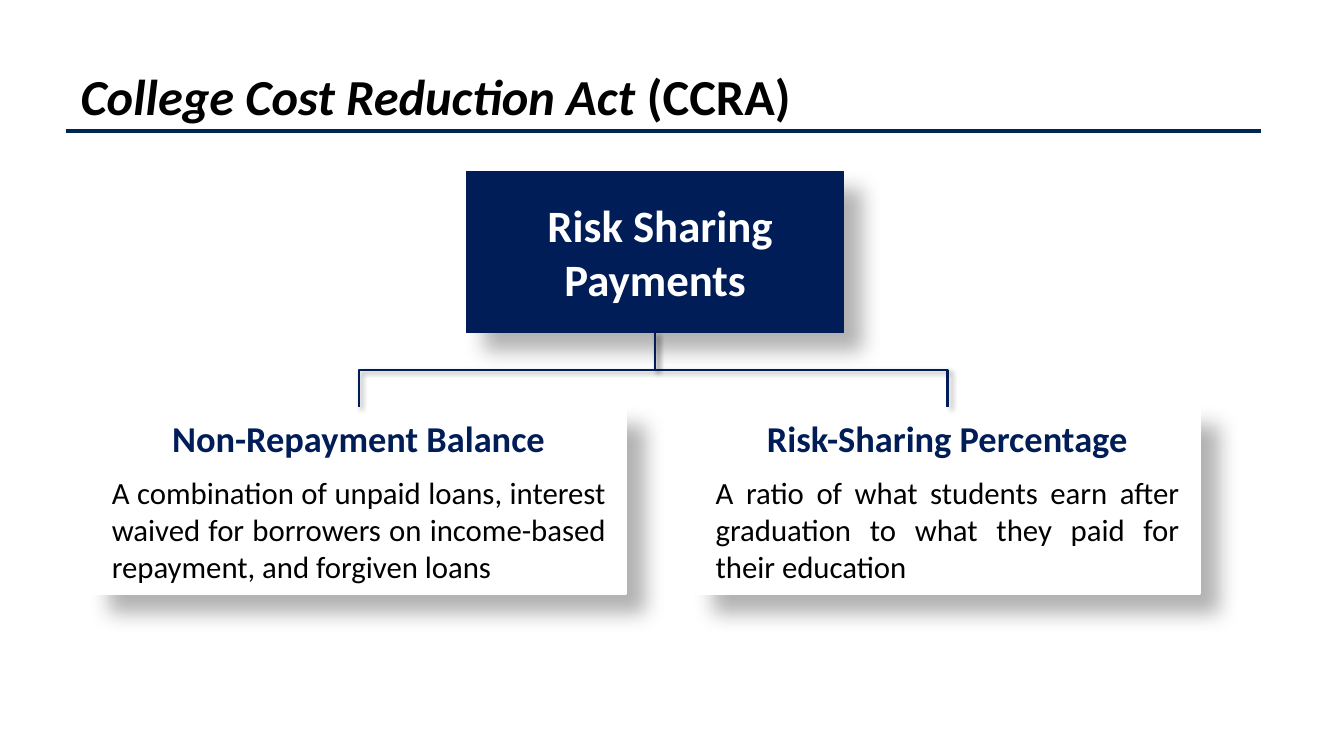
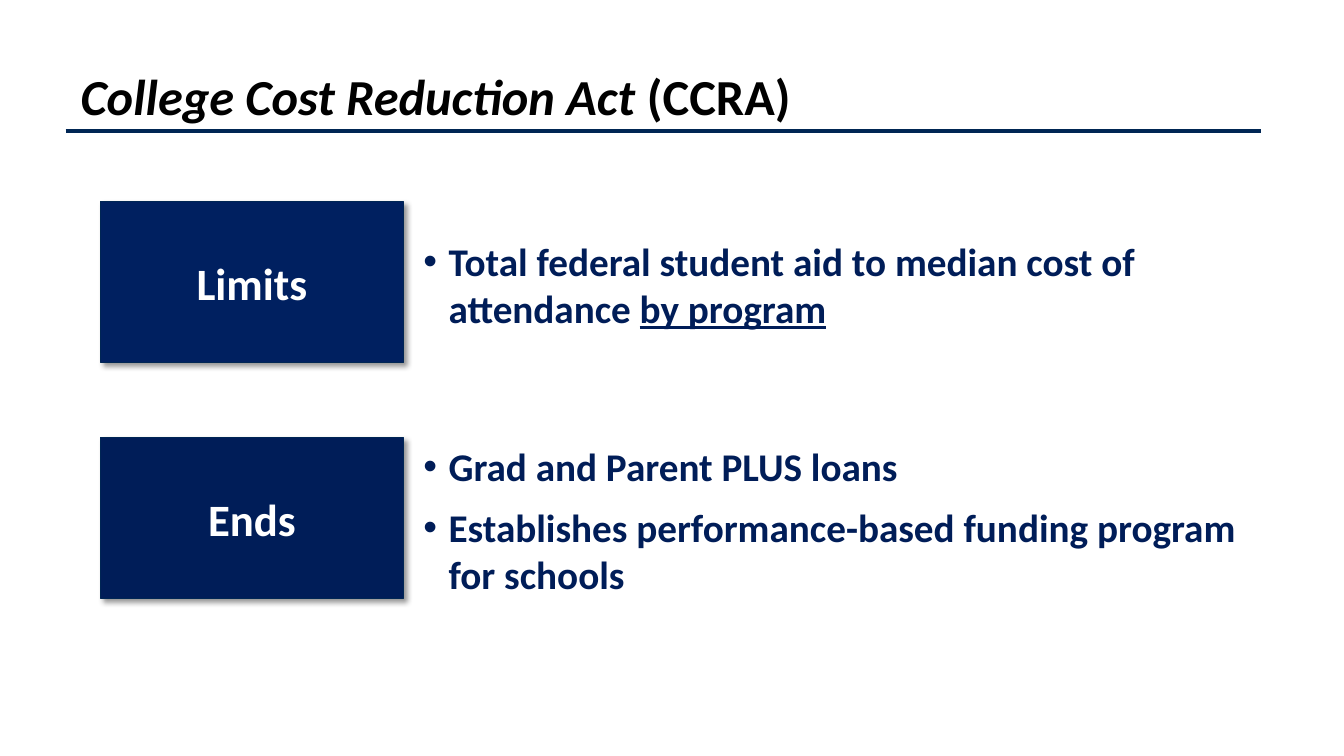
import pptx
import pptx.util
import pptx.dml.color
import pptx.enum.shapes
import pptx.enum.text
import pptx.oxml.ns
from lxml import etree

NAVY, BLUE, RULE, WHITE, BLACK = "001D58", "002060", "002654", "FFFFFF", "000000"
COLUMNS, ROWS, PER_INCH = 133.33, 75, 10
DEEP = {"alpha": 30, "blur": 15, "distance": 18}
SOFT = {"alpha": 40, "blur": 4, "distance": 3}
ALIGN = pptx.enum.text.PP_ALIGN
CONNECTOR = pptx.enum.shapes.MSO_CONNECTOR
qn = pptx.oxml.ns.qn


def grid(count):
    """Turn a number of columns or rows into a length."""
    return pptx.util.Inches(count / PER_INCH)


def color(hex_string):
    """Turn a hex string into a colour."""
    return pptx.dml.color.RGBColor.from_string(hex_string)


class Deck:
    """Holds the shared style and the current slide."""

    font_name = "Calibri"

    def __init__(self):
        """Start an empty wide presentation."""
        self.presentation = pptx.Presentation()
        self.presentation.slide_width = grid(COLUMNS)
        self.presentation.slide_height = grid(ROWS)
        self.slide = None

    def start(self, layout, title_runs, title_width):
        """Open a slide with its title and the rule below it."""
        self.slide = self.presentation.slides.add_slide(self.presentation.slide_layouts[layout])
        title = self.slide.shapes.title
        self.place(title, 7, 6, title_width, 7)
        self.frame(title)
        self.fill_paragraph(title.text_frame.paragraphs[0], title_runs, 36, BLACK)
        rule = self.slide.shapes.add_connector(
            CONNECTOR.STRAIGHT, grid(6.5), grid(13), grid(125.1), grid(13))
        self.outline(rule, RULE, 3)
        self.effects(rule)

    def place(self, item, left, top, width, height):
        """Move and size an item on the grid."""
        item.left, item.top = grid(left), grid(top)
        item.width, item.height = grid(width), grid(height)

    def frame(self, item, side=1, edge=0.5):
        """Set wrapping, anchor and insets of an item's text."""
        text = item.text_frame
        text.word_wrap = True
        text.auto_size = pptx.enum.text.MSO_AUTO_SIZE.NONE
        text.vertical_anchor = pptx.enum.text.MSO_ANCHOR.MIDDLE
        text.margin_left = text.margin_right = grid(side)
        text.margin_top = text.margin_bottom = grid(edge)

    def fill_paragraph(self, paragraph, runs, size, ink, align=ALIGN.LEFT, bold=True, before=0):
        """Fill a paragraph with (text, italic, underline) runs in one font."""
        for words, italic, underline in runs:
            run = paragraph.add_run()
            run.text = words
            if italic:
                run.font.italic = True
            if underline:
                run.font.underline = True
        paragraph.alignment = align
        paragraph.space_before = pptx.util.Pt(before)
        font = paragraph.font
        font.name, font.size, font.bold = self.font_name, pptx.util.Pt(size), bold
        font.color.rgb = color(ink)

    def outline(self, item, ink, weight):
        """Colour the line of an item."""
        item.line.color.rgb = color(ink)
        item.line.width = pptx.util.Pt(weight)

    def effects(self, item, shadow=None):
        """Replace the theme effect by the given shadow or by none."""
        effect_list = etree.SubElement(item._element.spPr, qn("a:effectLst"))
        if shadow:
            outer = etree.SubElement(
                effect_list, qn("a:outerShdw"),
                blurRad=str(pptx.util.Pt(shadow["blur"])),
                dist=str(pptx.util.Pt(shadow["distance"])),
                dir="2700000", algn="tl", rotWithShape="0")
            tint = etree.SubElement(outer, qn("a:srgbClr"), val=BLACK)
            etree.SubElement(tint, qn("a:alpha"), val=str(shadow["alpha"] * 1000))

    def box(self, area, fill, edge, weight, shadow):
        """Draw a filled rectangle with a shadow."""
        rectangle = self.slide.shapes.add_shape(
            pptx.enum.shapes.MSO_SHAPE.RECTANGLE, *map(grid, area))
        rectangle.fill.solid()
        rectangle.fill.fore_color.rgb = color(fill)
        self.outline(rectangle, edge, weight)
        self.effects(rectangle, shadow)
        return rectangle

    def label(self, area, words, fill, edge, shadow):
        """Draw a dark box with a white heading."""
        heading = self.box(area, fill, edge, 0.75, shadow)
        self.frame(heading)
        self.fill_paragraph(heading.text_frame.paragraphs[0], [(words, False, False)],
                            32, WHITE, ALIGN.CENTER)
        return heading

    def card(self, area, heading, detail):
        """Draw a white box with a heading and an explanation."""
        card = self.box(area, WHITE, WHITE, 1.5, DEEP)
        self.frame(card, 2, 1)
        self.fill_paragraph(card.text_frame.paragraphs[0], [(heading, False, False)],
                            26, NAVY, ALIGN.CENTER)
        self.fill_paragraph(card.text_frame.add_paragraph(), [(detail, False, False)],
                            22, BLACK, ALIGN.JUSTIFY, bold=False, before=10)
        return card

    def branch(self, parent, child):
        """Join a parent's bottom to a child's top with an elbow."""
        start_x, start_y = parent.left + parent.width // 2, parent.top + parent.height
        end_x, end_y = child.left + child.width // 2, child.top
        elbow = self.slide.shapes.add_connector(CONNECTOR.ELBOW, start_x, start_y, end_x, end_y)
        elbow.begin_connect(parent, 2)
        elbow.end_connect(child, 0)
        middle_x, middle_y = (start_x + end_x) // 2, (start_y + end_y) // 2
        to_right = end_x > start_x
        reach = (end_y - start_y) // 2 * (-1 if to_right else 1)
        drop = abs(end_x - start_x) // 2
        elbow.begin_x, elbow.end_x = middle_x - reach, middle_x + reach
        elbow.begin_y, elbow.end_y = middle_y - drop, middle_y + drop
        turn = 270 if to_right else 90
        elbow._element.spPr.find(qn("a:xfrm")).set("rot", str(turn * 60000))
        self.outline(elbow, NAVY, 1.5)
        self.effects(elbow, SOFT)

    def bullets(self, index, area, points):
        """Fill a body placeholder with bulleted points."""
        body = self.slide.placeholders[index]
        self.place(body, *area)
        self.frame(body, 2, 1)
        for position, runs in enumerate(points):
            text = body.text_frame
            paragraph = text.add_paragraph() if position else text.paragraphs[0]
            properties = paragraph._p.get_or_add_pPr()
            indent = grid(2.5)
            properties.set("marL", str(indent))
            properties.set("indent", str(-indent))
            etree.SubElement(properties, qn("a:buFont"), typeface="Arial")
            etree.SubElement(properties, qn("a:buChar"), char="•")
            self.fill_paragraph(paragraph, runs, 28, NAVY, before=10 if position else 0)


def main():
    """Build both slides and save them."""
    deck = Deck()
    act = [("College Cost Reduction Act ", True, False), ("(CCRA)", False, False)]

    deck.start(5, act, 118)
    payments = deck.label((46.3, 17, 37.4, 16), " Risk Sharing Payments", NAVY, NAVY, DEEP)
    balance = deck.card(
        (9.1, 40.4, 53, 18.5), "Non-Repayment Balance",
        "A combination of unpaid loans, interest waived for borrowers on "
        "income-based repayment, and forgiven loans")
    percentage = deck.card(
        (69, 40.4, 50, 18.5), "Risk-Sharing Percentage",
        "A ratio of what students earn after graduation to what they paid for their education")
    for factor in (percentage, balance):
        deck.branch(payments, factor)

    deck.start(3, act, 121.7)
    measures = [
        ("Limits", BLUE, 20, 83.2, [
            [("Total federal student aid to median cost of attendance ", False, False),
             ("by program", False, True)]]),
        ("Ends", NAVY, 43.4, 85.1, [
            [("Grad and Parent PLUS loans", False, False)],
            [("Establishes performance-based funding program for schools", False, False)]]),
    ]
    for index, (verb, fill, top, width, points) in enumerate(measures, 1):
        deck.label((10, top, 30, 16), verb, fill, RULE, SOFT)
        deck.bullets(index, (40, top + 0.2, width, 16), points)

    deck.presentation.save("out.pptx")


if __name__ == "__main__":
    main()
